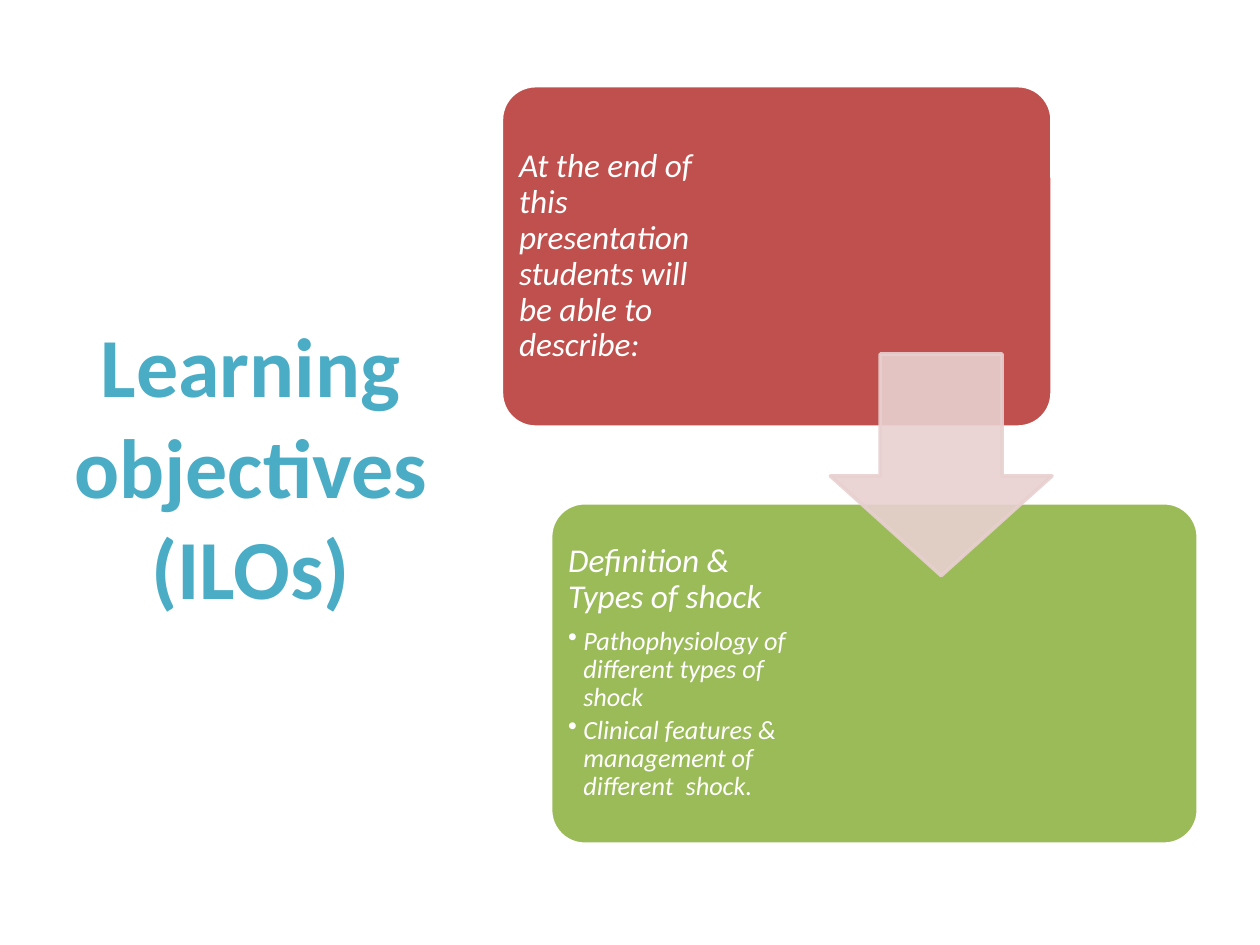
from pptx import Presentation
from pptx.dml.color import RGBColor
from pptx.enum.shapes import MSO_SHAPE
from pptx.enum.text import MSO_ANCHOR, MSO_AUTO_SIZE, PP_ALIGN
from pptx.oxml.ns import qn
from pptx.util import Inches, Pt
from lxml import etree

ROUND, ARROW = MSO_SHAPE.ROUNDED_RECTANGLE, MSO_SHAPE.DOWN_ARROW
MIDDLE, FIXED = MSO_ANCHOR.MIDDLE, MSO_AUTO_SIZE.NONE
CENTER, LEFT = PP_ALIGN.CENTER, PP_ALIGN.LEFT
WHITE, PINK = "FFFFFF", "E8D0D0"


def style(font, color, **values):
    font.color.rgb = RGBColor.from_string(color)
    for name, value in {"name": "Calibri", **values}.items():
        setattr(font, name, value)


def draw(kind, box, fill, line, adjust):
    """Add a filled and outlined preset shape."""
    shape = slide.shapes.add_shape(kind, *map(Inches, box))
    for i, value in enumerate(adjust):
        shape.adjustments[i] = value
    shape.shadow.inherit = False
    shape.fill.solid()
    shape.fill.fore_color.rgb = RGBColor.from_string(fill)
    shape.line.color.rgb = RGBColor.from_string(line)
    shape.line.width = Pt(2)
    return shape


prs = Presentation()
prs.slide_width, prs.slide_height = Inches(10), Inches(7.5)
slide = prs.slides.add_slide(prs.slide_layouts[5])

title = slide.shapes.title
title.left, title.top = Inches(0.43), Inches(0.68)
title.width, title.height = Inches(3.12), Inches(6.02)
frame = title.text_frame
frame.text = "Learning objectives (ILOs)"
frame.auto_size, frame.vertical_anchor = FIXED, MIDDLE
frame.paragraphs[0].alignment = CENTER
style(frame.paragraphs[0].runs[0].font, "4BACC6", size=Pt(48), bold=True)

# Card box, colour, text box, heading, bullet points
cards = [
    ((3.98, 0.68, 4.37, 2.71), "C0504D", (4.04, 0.73, 1.62, 2.61),
     "At the end of this presentation students will be able to describe:", []),
    ((4.37, 3.99, 5.14, 2.71), "9BBB59", (4.43, 4.05, 2.03, 2.58),
     "Definition & Types of shock",
     ["Pathophysiology of different types of shock",
      "Clinical features & management of different  shock."]),
]
for box, color, area, head, points in cards:
    draw(ROUND, box, color, WHITE, [0.1])
    frame = slide.shapes.add_textbox(*map(Inches, area)).text_frame
    frame.word_wrap, frame.auto_size, frame.vertical_anchor = True, FIXED, MIDDLE
    for side in ("left", "top", "right", "bottom"):
        setattr(frame, f"margin_{side}", Inches(0.08))
    for i, text in enumerate([head, *points]):
        para = frame.add_paragraph() if i else frame.paragraphs[0]
        para.alignment, para.line_spacing = LEFT, 0.9
        para.space_after = Pt(2.25 if i else 6.65)
        if i:
            para.level = 1
            props = para._p.get_or_add_pPr()
            props.set("marL", str(Inches(0.12)))
            props.set("indent", str(Inches(-0.12)))
            etree.SubElement(props, qn("a:buChar")).set("char", "•")
        run = para.add_run()
        run.text = text
        style(run.font, WHITE, size=Pt(15 if i else 19), italic=True)

arrow = draw(ARROW, (6.59, 2.81, 1.76, 1.76), PINK, PINK, [0.55, 0.45])
for tint in arrow._element.spPr.iter(qn("a:srgbClr")):
    etree.SubElement(tint, qn("a:alpha")).set("val", "90000")

prs.save("out.pptx")
